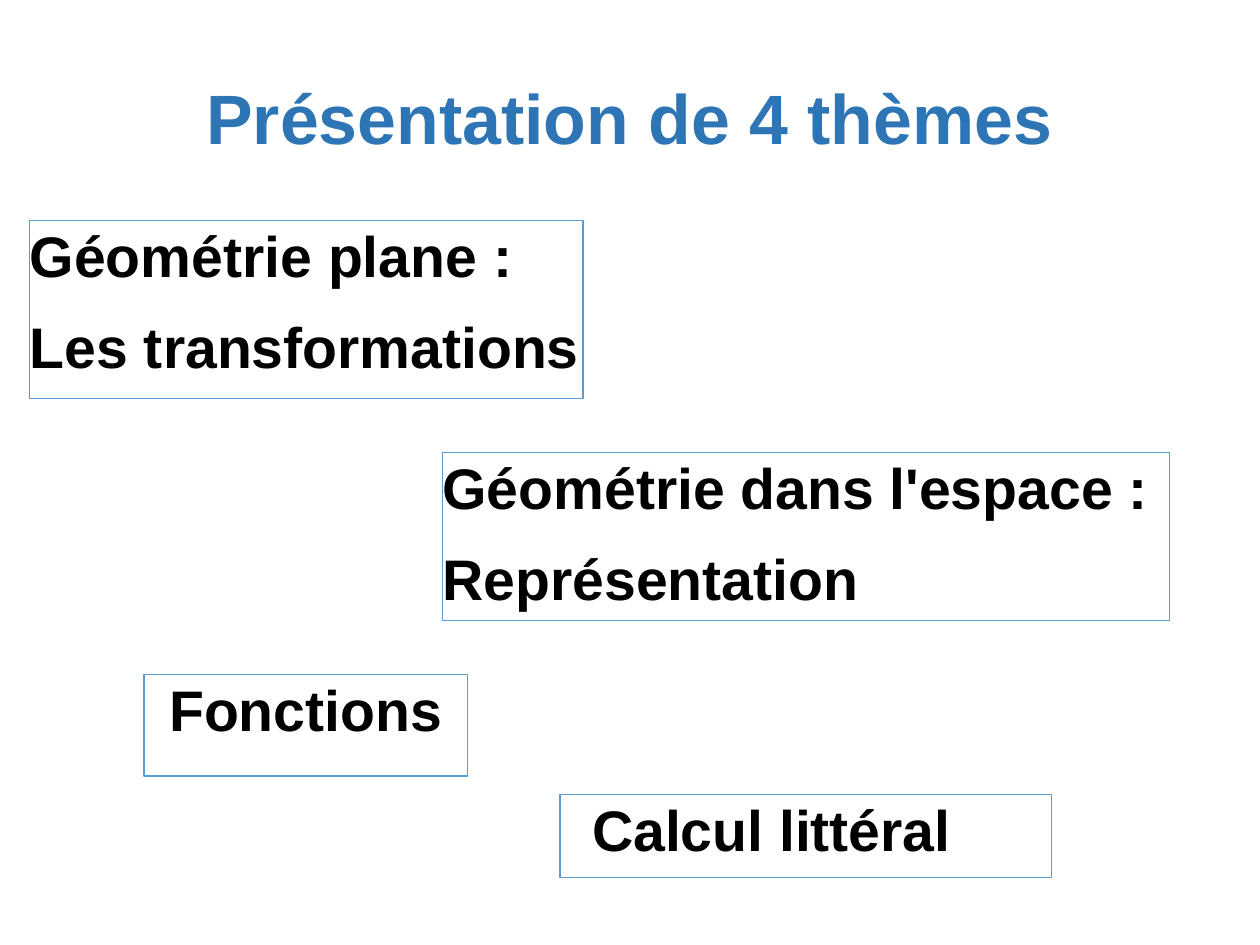
from dataclasses import dataclass

from pptx import Presentation
from pptx.dml.color import RGBColor
from pptx.enum.text import MSO_ANCHOR, PP_ALIGN
from pptx.util import Cm, Inches, Pt

LEFT, CENTER = PP_ALIGN.LEFT, PP_ALIGN.CENTER
TOP, MIDDLE = MSO_ANCHOR.TOP, MSO_ANCHOR.MIDDLE


@dataclass(frozen=True)
class Theme:
    font: str = "Arial"
    title_color: RGBColor = RGBColor(0x2E, 0x75, 0xB6)
    text_color: RGBColor = RGBColor(0, 0, 0)
    border_color: RGBColor = RGBColor(0x5B, 0x9B, 0xD5)
    title_size: Pt = Pt(44)
    text_size: Pt = Pt(36)
    line_height: Pt = Pt(43.2)
    paragraph_gap: Pt = Pt(14.1)
    border_width: Pt = Pt(0.75)


class ThemeSlide:
    """Places elements by percentages of the slide's width and height."""

    def __init__(self, deck, theme):
        self.deck = deck
        self.theme = theme
        self.page = deck.slides.add_slide(deck.slide_layouts[6])

    def text_box(self, area, lines, size, color, align, anchor):
        left, top, width, height = area
        across, down = self.deck.slide_width / 100, self.deck.slide_height / 100
        box = self.page.shapes.add_textbox(
            round(left * across), round(top * down),
            round(width * across), round(height * down))
        frame = box.text_frame
        frame.word_wrap = True
        frame.vertical_anchor = anchor
        frame.margin_left = frame.margin_right = 0
        frame.margin_top = frame.margin_bottom = 0
        frame.text = "\n".join(lines)
        for para in frame.paragraphs:
            para.alignment = align
            para.font.name = self.theme.font
            para.font.size = size
            para.font.bold = True
            para.font.color.rgb = color
        return box

    def title(self, area, text):
        self.text_box(area, [text], self.theme.title_size,
                      self.theme.title_color, CENTER, MIDDLE)

    def topic(self, area, lines, align=LEFT, indent=0):
        theme = self.theme
        box = self.text_box(area, lines, theme.text_size, theme.text_color,
                            align, TOP)
        box.line.color.rgb = theme.border_color
        box.line.width = theme.border_width
        box.text_frame.margin_left = indent
        for para in box.text_frame.paragraphs:
            para.line_spacing = theme.line_height
            para.space_after = theme.paragraph_gap


def main():
    deck = Presentation()
    deck.slide_width, deck.slide_height = Cm(28), Cm(21)
    slide = ThemeSlide(deck, Theme())

    # Heading
    slide.title((5, 4, 90, 16.7), "Présentation de 4 thèmes")

    # The four topics
    slide.topic((2.36, 23.34, 43.91, 18.87),
                ["Géométrie plane :", "Les transformations"])
    slide.topic((35.11, 47.9, 57.69, 17.78),
                ["Géométrie dans l'espace :", "Représentation"])
    slide.topic((44.45, 84.06, 39.01, 8.83), ["Calcul littéral"],
                indent=Inches(0.28))
    slide.topic((11.43, 71.36, 25.67, 10.76), ["Fonctions"], align=CENTER)

    deck.save("out.pptx")


if __name__ == "__main__":
    main()
